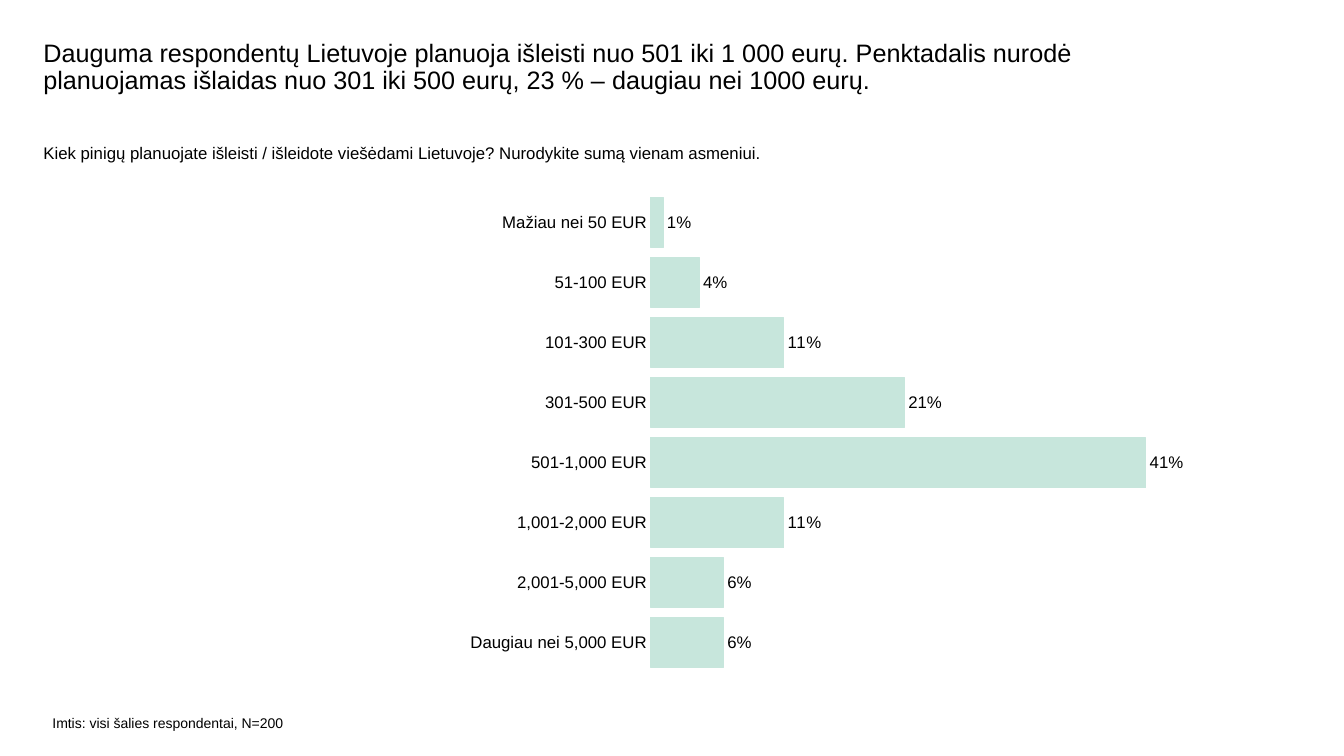
"""Build a slide on planned spending in Lithuania with a bar chart."""
from lxml import etree
from pptx import Presentation
from pptx.chart.data import CategoryChartData
from pptx.dml.color import RGBColor
from pptx.enum.chart import XL_CHART_TYPE, XL_LABEL_POSITION, XL_TICK_MARK
from pptx.enum.text import MSO_ANCHOR, MSO_AUTO_SIZE, PP_ALIGN
from pptx.oxml.ns import qn
from pptx.util import Inches, Pt

BAR_CLUSTERED = XL_CHART_TYPE.BAR_CLUSTERED
OUTSIDE_END = XL_LABEL_POSITION.OUTSIDE_END
NO_TICK = XL_TICK_MARK.NONE
TOP = MSO_ANCHOR.TOP
NO_FIT = MSO_AUTO_SIZE.NONE
LEFT = PP_ALIGN.LEFT

BLACK, WHITE, MINT = "000000", "FFFFFF", "C7E6DC"


def color(value):
    return RGBColor.from_string(value)


def write(sp, text, box, size, spacing=1.0):
    sp.left, sp.top, sp.width, sp.height = [Inches(v) for v in box]
    tf = sp.text_frame
    tf.margin_left = tf.margin_top = tf.margin_right = tf.margin_bottom = 0
    tf.word_wrap = True
    tf.auto_size = NO_FIT
    tf.vertical_anchor = TOP
    p = tf.paragraphs[0]
    p.text = text
    p.alignment = LEFT
    p.line_spacing = spacing
    p.font.name, p.font.size = "Arial", Pt(size)
    p.font.color.rgb = color(BLACK)


prs = Presentation()
prs.slide_width, prs.slide_height = Inches(13.33), Inches(7.5)
s = prs.slides.add_slide(prs.slide_layouts[5])

write(s.shapes.title,
      "Dauguma respondentų Lietuvoje planuoja išleisti nuo 501 iki 1 000 eurų. "
      "Penktadalis nurodė planuojamas išlaidas nuo 301 iki 500 eurų, "
      "23 % – daugiau nei 1000 eurų.",
      (0.43, 0.4, 10.78, 0.6), 18, 0.9)

notes = [
    ("Kiek pinigų planuojate išleisti / išleidote viešėdami Lietuvoje? "
     "Nurodykite sumą vienam asmeniui.", (0.43, 1.42, 11.89, 0.61), 12),
    ("Imtis: visi šalies respondentai, N=200", (0.52, 7.09, 2.53, 0.24), 10),
]
for text, box, size in notes:
    write(s.shapes.add_textbox(0, 0, 0, 0), text, box, size)

spending = {
    "Mažiau nei 50 EUR": 0.01,
    "51-100 EUR": 0.04,
    "101-300 EUR": 0.11,
    "301-500 EUR": 0.21,
    "501-1,000 EUR": 0.41,
    "1,001-2,000 EUR": 0.11,
    "2,001-5,000 EUR": 0.06,
    "Daugiau nei 5,000 EUR": 0.06,
}
data = CategoryChartData(number_format="0%")
data.categories = list(spending)
data.add_series("Series 1", list(spending.values()))
chart = s.shapes.add_chart(BAR_CLUSTERED, Inches(1.63), Inches(1.73),
                           Inches(10.38), Inches(5.37), data).chart
chart.has_legend = False
chart.has_title = False
chart.font.name, chart.font.size = "Arial", Pt(12)
chart.font.color.rgb = color(BLACK)

cat_axis = chart.category_axis
cat_axis.reverse_order = True
cat_axis.major_tick_mark = cat_axis.minor_tick_mark = NO_TICK
cat_axis.format.line.color.rgb = color(WHITE)
cat_axis.format.line.width = Pt(0.75)

val_axis = chart.value_axis
val_axis.minimum_scale, val_axis.maximum_scale = 0, 0.45
val_axis.has_major_gridlines = False
val_axis.visible = False

plot = chart.plots[0]
plot.gap_width = 20
plot.vary_by_categories = False
bars = plot.series[0]
bars.format.fill.solid()
bars.format.fill.fore_color.rgb = color(MINT)
bars.format.line.color.rgb = color(MINT)
bars.format.line.width = Pt(0.75)

plot.has_data_labels = True
labels = plot.data_labels
labels.show_value = True
labels.position = OUTSIDE_END
labels.number_format = "0%"
labels.number_format_is_linked = False
labels.font.name, labels.font.size = "Arial", Pt(12)
labels.font.color.rgb = color(BLACK)

plot_area = chart.element.find(".//" + qn("c:plotArea"))
for old in plot_area.findall(qn("c:layout")):
    plot_area.remove(old)
layout = etree.Element(qn("c:layout"))
manual = etree.SubElement(layout, qn("c:manualLayout"))
for tag, value in [("layoutTarget", "inner"), ("xMode", "edge"), ("yMode", "edge"),
                   ("x", "0.465"), ("y", "0.034"), ("w", "0.519"), ("h", "0.887")]:
    etree.SubElement(manual, qn("c:" + tag)).set("val", value)
plot_area.insert(0, layout)

prs.save("out.pptx")
